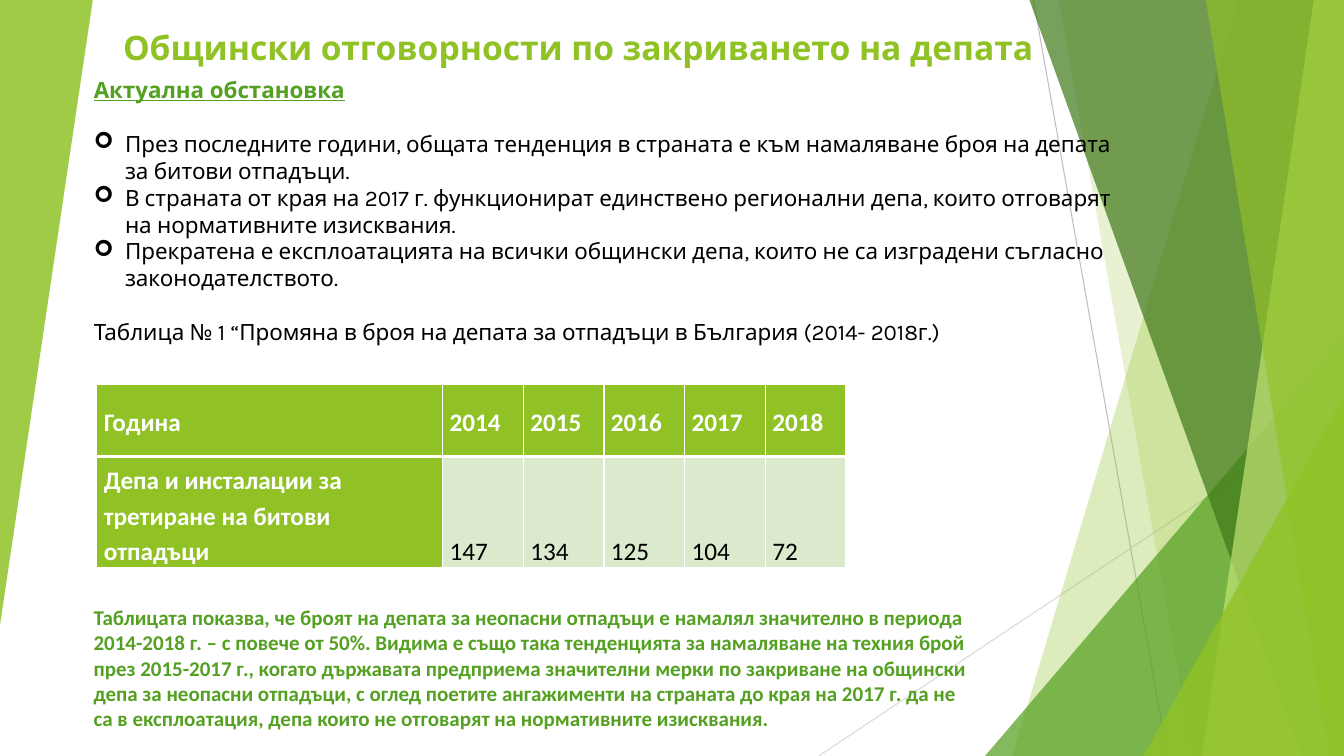
"""Build a slide on municipal duties in closing landfills, with a table of landfill counts."""
from dataclasses import dataclass

from lxml import etree
from pptx import Presentation
from pptx.dml.color import RGBColor
from pptx.enum.shapes import MSO_CONNECTOR, MSO_SHAPE
from pptx.enum.text import MSO_ANCHOR, MSO_AUTO_SIZE, PP_ALIGN
from pptx.oxml.ns import qn
from pptx.util import Inches, Pt

TRIANGLE = MSO_SHAPE.ISOSCELES_TRIANGLE
STRAIGHT = MSO_CONNECTOR.STRAIGHT
MIDDLE, BOTTOM = MSO_ANCHOR.MIDDLE, MSO_ANCHOR.BOTTOM
LEFT, JUSTIFY = PP_ALIGN.LEFT, PP_ALIGN.JUSTIFY
FIT_SHAPE, NO_FIT = MSO_AUTO_SIZE.SHAPE_TO_FIT_TEXT, MSO_AUTO_SIZE.NONE


@dataclass(frozen=True)
class Theme:
    lime: str = "90C226"
    green: str = "54A021"
    forest: str = "3F7819"
    pale_lime: str = "C0E474"
    pale_cell: str = "DBE9CD"
    white: str = "FFFFFF"
    black: str = "000000"
    line_dark: str = "BFBFBF"
    line_light: str = "D9D9D9"
    heading_font: str = "Karla"
    table_font: str = "Calibri"
    title_size: int = 24
    body_size: int = 16
    table_size: int = 18
    note_size: int = 15


theme = Theme()
WIDTH, HEIGHT = 13.33, 7.5


def write_text(paragraph, text, *, size, font, color, bold=False, underline=False,
               align=LEFT, before=0, after=0, spacing=1.0):
    paragraph.alignment = align
    paragraph.space_before, paragraph.space_after = Pt(before), Pt(after)
    paragraph.line_spacing = spacing
    run = paragraph.add_run()
    run.text = text
    run.font.size, run.font.name = Pt(size), font
    run.font.bold, run.font.underline = bold, underline
    run.font.color.rgb = RGBColor.from_string(color)


def paint(shape, color, opacity):
    shape.shadow.inherit = False
    shape.line.fill.background()
    shape.fill.solid()
    shape.fill.fore_color.rgb = RGBColor.from_string(color)
    color_element = shape.element.spPr.find(qn("a:solidFill"))[0]
    etree.SubElement(color_element, qn("a:alpha"), val=str(opacity * 1000))


presentation = Presentation()
presentation.slide_width, presentation.slide_height = Inches(WIDTH), Inches(HEIGHT)
slide = presentation.slides.add_slide(presentation.slide_layouts[1])
shapes = slide.shapes

for start_x, start_y, end_x, end_y, color in [
    (10.25, 0, 11.58, HEIGHT, theme.line_dark),
    (WIDTH, 4.03, 8.12, HEIGHT, theme.line_light),
]:
    connector = shapes.add_connector(
        STRAIGHT, Inches(start_x), Inches(start_y), Inches(end_x), Inches(end_y))
    connector.line.color.rgb = RGBColor.from_string(color)
    connector.line.width = Pt(0.75)
    etree.SubElement(connector.element.spPr, qn("a:effectLst"))

decorations = [
    ("band", (12.28, 10.04), theme.lime, 30),
    ("band", (10.5, 11.83), theme.lime, 20),
    ("triangle", (9.77, 3.33, 3.56, 4.17, 0), theme.green, 72),
    ("band", (10.21, 12.91), theme.forest, 70),
    ("band", (13.03, 11.92), theme.pale_lime, 70),
    ("band", (11.96, 13.18), theme.lime, 65),
    ("triangle", (11.34, 3.93, 1.99, 3.57, 0), theme.lime, 80),
    ("triangle", (0, 0, 0.92, 6.2, 180), theme.lime, 85),
]
for kind, geometry, color, opacity in decorations:
    if kind == "band":
        top_x, bottom_x = geometry
        builder = shapes.build_freeform(Inches(top_x), 0)
        builder.add_line_segments([
            (Inches(WIDTH), 0), (Inches(WIDTH), Inches(HEIGHT)),
            (Inches(bottom_x), Inches(HEIGHT))])
        decoration = builder.convert_to_shape()
    else:
        *box, rotation = geometry
        decoration = shapes.add_shape(TRIANGLE, *map(Inches, box))
        decoration.adjustments[0] = 1
        decoration.rotation = rotation
    paint(decoration, color, opacity)

title, body = shapes.title, slide.placeholders[1]
for placeholder, box in [(body, (0.83, 0.71, 10.42, 3.1)), (title, (1.12, 0.14, 9.85, 0.58))]:
    placeholder.left, placeholder.top, placeholder.width, placeholder.height = map(Inches, box)
    placeholder.text_frame.word_wrap = True
    placeholder.element.getparent().append(placeholder.element)
title.text_frame.auto_size = NO_FIT
title.text_frame.vertical_anchor = BOTTOM
write_text(title.text_frame.paragraphs[0], "Общински отговорности по закриването на депата",
           size=theme.title_size, font=theme.heading_font, color=theme.lime, bold=True)

body.text_frame.auto_size = FIT_SHAPE
body_lines = [
    ("Актуална обстановка", False, 0),
    ("През последните години, общата тенденция в страната е към намаляване броя на депата "
     "за битови отпадъци.", True, 19),
    ("В страната от края на 2017 г. функционират единствено регионални депа, които отговарят "
     "на нормативните изисквания.", True, 0),
    ("Прекратена е експлоатацията на всички общински депа, които не са изградени съгласно "
     "законодателството.", True, 0),
    ("Таблица № 1 “Промяна в броя на депата за отпадъци в България (2014- 2018г.)", False, 19),
]
for index, (text, bulleted, before) in enumerate(body_lines):
    paragraph = body.text_frame.paragraphs[0] if index == 0 else body.text_frame.add_paragraph()
    is_heading = index == 0
    write_text(paragraph, text, size=theme.body_size, font=theme.heading_font,
               color=theme.green if is_heading else theme.black,
               bold=is_heading, underline=is_heading, before=before)
    properties = paragraph._p.get_or_add_pPr()
    indent = Inches(0.31) if bulleted else 0
    properties.set("marL", str(indent))
    properties.set("indent", str(-indent))
    if bulleted:
        etree.SubElement(properties, qn("a:buFont"), typeface="Wingdings")
        etree.SubElement(properties, qn("a:buChar"), char="➢")
    else:
        etree.SubElement(properties, qn("a:buNone"))

landfill_rows = [
    ("Година", "2014", "2015", "2016", "2017", "2018"),
    ("Депа и инсталации за третиране на битови отпадъци", "147", "134", "125", "104", "72"),
]
table = shapes.add_table(2, 6, Inches(0.96), Inches(3.81), Inches(7.43), Inches(1.82)).table
table.first_row = table.horz_banding = False
for index, column in enumerate(table.columns):
    column.width = Inches(0.8 if index else 3.43)
table.rows[0].height, table.rows[1].height = Inches(0.72), Inches(1.1)

for row_index, values in enumerate(landfill_rows):
    for column_index, value in enumerate(values):
        cell = table.cell(row_index, column_index)
        is_label = row_index == 0 or column_index == 0
        cell.vertical_anchor = BOTTOM if row_index else MIDDLE
        cell.margin_left = cell.margin_right = Inches(0.07)
        cell.margin_top = cell.margin_bottom = 0
        cell.fill.solid()
        cell.fill.fore_color.rgb = RGBColor.from_string(
            theme.lime if is_label else theme.pale_cell)
        write_text(cell.text_frame.paragraphs[0], value, size=theme.table_size,
                   font=theme.table_font, color=theme.white if is_label else theme.black,
                   bold=is_label, align=LEFT if row_index and is_label else JUSTIFY,
                   before=5, after=6, spacing=1.15)
        divider = "a:lnT" if row_index else "a:lnB"
        for position, side in enumerate(("a:lnL", "a:lnR", "a:lnT", "a:lnB")):
            border = etree.Element(qn(side), w=str(Pt(3 if side == divider else 1)))
            border_fill = etree.SubElement(border, qn("a:solidFill"))
            etree.SubElement(border_fill, qn("a:srgbClr"), val=theme.white)
            cell._tc.get_or_add_tcPr().insert(position, border)

note = shapes.add_textbox(Inches(0.83), Inches(5.95), Inches(8.87), Inches(1.36))
note.text_frame.word_wrap = True
note.text_frame.auto_size = FIT_SHAPE
write_text(
    note.text_frame.paragraphs[0],
    "Таблицата показва, че броят на депата за неопасни отпадъци е намалял значително в периода "
    "2014-2018 г. – с повече от 50%. Видима е също така тенденцията за намаляване на техния брой "
    "през 2015-2017 г., когато държавата предприема значителни мерки по закриване на общински "
    "депа за неопасни отпадъци, с оглед поетите ангажименти на страната до края на 2017 г. да не "
    "са в експлоатация, депа които не отговарят на нормативните изисквания.",
    size=theme.note_size, font=theme.table_font, color=theme.green, bold=True)

presentation.save("out.pptx")
